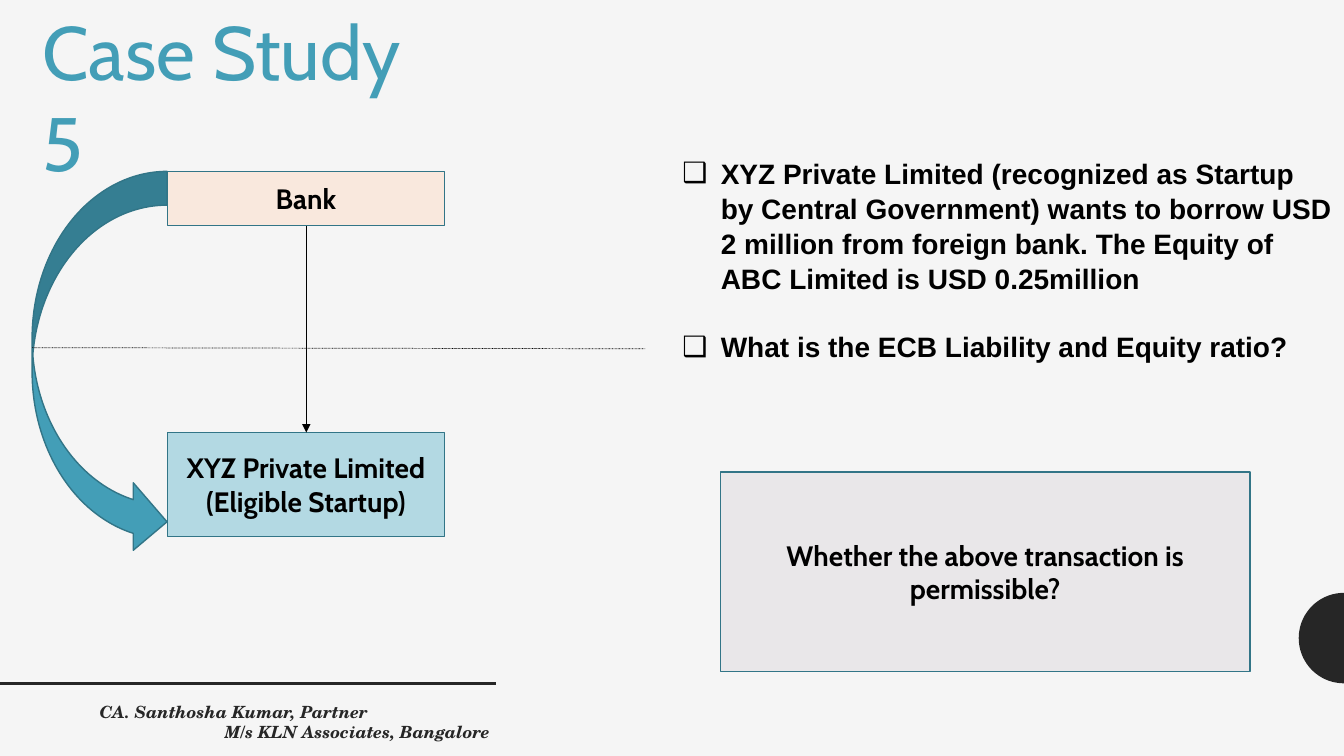
import math
from dataclasses import dataclass

from lxml import etree
from pptx import Presentation
from pptx import util as u
from pptx.dml.color import RGBColor
from pptx.enum import dml, shapes, text
from pptx.oxml.ns import qn


@dataclass(frozen=True)
class Theme:
    background: str = "F5F5F5"
    dark: str = "262626"
    ink: str = "000000"
    accent: str = "439EB7"
    outline: str = "327587"
    bank: str = "F9E8DD"
    startup: str = "B3D9E3"
    question: str = "E9E7E9"
    title_size: int = 54
    body_size: int = 20
    footer_size: int = 12
    heading_font: str = "Cabin"
    body_font: str = "Arial"
    footer_font: str = "TeX Gyre Schola"


THEME = Theme()
SLIDE_W, SLIDE_H = 33.87, 19.05
LEFT, CENTER = text.PP_ALIGN.LEFT, text.PP_ALIGN.CENTER


def rgb(color):
    return RGBColor.from_string(color)


def place(sp, left, top, width, height):
    sp.left, sp.top = u.Cm(left), u.Cm(top)
    sp.width, sp.height = u.Cm(width), u.Cm(height)


def write(p, content, size=THEME.body_size, font=THEME.heading_font,
          color=THEME.ink, bold=True, italic=False, align=LEFT):
    p.alignment = align
    r = p.add_run()
    r.text = content
    r.font.size, r.font.name = u.Pt(size), font
    r.font.bold, r.font.italic = bold, italic
    r.font.color.rgb = rgb(color)


def set_indent(p, left, first=0):
    pPr = p._p.get_or_add_pPr()
    pPr.set("marL", str(u.Cm(left)))
    pPr.set("indent", str(u.Cm(first)))
    return pPr


def set_frame(tf, anchor):
    tf.word_wrap = True
    tf.auto_size = text.MSO_AUTO_SIZE.NONE
    tf.vertical_anchor = anchor


def add_title(s, content, *box):
    title = s.shapes.title
    place(title, *box)
    set_frame(title.text_frame, text.MSO_ANCHOR.TOP)
    write(title.text_frame.paragraphs[0], content, size=THEME.title_size,
          color=THEME.accent, bold=False)


def add_bullets(s, items, *box):
    body = s.placeholders[1]
    place(body, *box)
    tf = body.text_frame
    set_frame(tf, text.MSO_ANCHOR.TOP)
    for i, item in enumerate(items):
        p = tf.add_paragraph() if i else tf.paragraphs[0]
        pPr = set_indent(p, 0.97, -0.97)
        etree.SubElement(pPr, qn("a:buChar")).set("char", "❑")
        p.space_before = u.Pt(24 if i else 0)
        p.line_spacing = 1.04
        write(p, item, font=THEME.body_font)


def add_preset(s, kind, fill, *box, label=""):
    sp = s.shapes.add_shape(kind, *map(u.Cm, box))
    sp.shadow.inherit = False
    sp.fill.solid()
    sp.fill.fore_color.rgb = rgb(fill)
    sp.line.color.rgb = rgb(THEME.outline)
    sp.line.width = u.Pt(1)
    if label:
        set_frame(sp.text_frame, text.MSO_ANCHOR.MIDDLE)
        write(sp.text_frame.paragraphs[0], label, align=CENTER)


def add_line(s, x1, y1, x2, y2, color=THEME.ink, width=0.5, dash=None, arrow=False):
    line = s.shapes.add_connector(shapes.MSO_CONNECTOR.STRAIGHT,
                                  *map(u.Cm, (x1, y1, x2, y2)))
    line.line.color.rgb = rgb(color)
    line.line.width = u.Pt(width)
    if dash:
        line.line.dash_style = dash
    if arrow:
        etree.SubElement(line.line._get_or_add_ln(), qn("a:tailEnd")).set("type", "triangle")
    etree.SubElement(line._element.spPr, qn("a:effectLst"))


def add_half_disc(s, cx, cy, radius, steps=36):
    """Draw the left half of a disc whose flat side lies at cx."""
    angles = [math.pi * (0.5 + i / steps) for i in range(steps + 1)]
    points = [(u.Cm(cx + radius * math.cos(a)), u.Cm(cy - radius * math.sin(a)))
              for a in angles]
    builder = s.shapes.build_freeform(*points[0])
    builder.add_line_segments(points[1:], close=True)
    sp = builder.convert_to_shape()
    sp.shadow.inherit = False
    sp.fill.solid()
    sp.fill.fore_color.rgb = rgb(THEME.dark)
    sp.line.fill.background()


def add_footer(s, lines, *box):
    tf = s.shapes.add_textbox(*map(u.Cm, box)).text_frame
    set_frame(tf, text.MSO_ANCHOR.TOP)
    for i, (content, indent) in enumerate(lines):
        p = tf.add_paragraph() if i else tf.paragraphs[0]
        set_indent(p, indent)
        write(p, content, size=THEME.footer_size, font=THEME.footer_font,
              color=THEME.dark, italic=True)


def main():
    prs = Presentation()
    prs.slide_width, prs.slide_height = u.Cm(SLIDE_W), u.Cm(SLIDE_H)
    s = prs.slides.add_slide(prs.slide_layouts[1])
    s.background.fill.solid()
    s.background.fill.fore_color.rgb = rgb(THEME.background)

    add_half_disc(s, SLIDE_W, 16.08, 1.14)
    add_line(s, 0, 17.22, 12.5, 17.22, color=THEME.dark, width=2)
    add_title(s, "Case Study 5", 0.81, 0, 10.64, 2.57)

    rect = shapes.MSO_SHAPE.RECTANGLE
    add_preset(s, rect, THEME.bank, 4.22, 4.32, 6.98, 1.37, label="Bank")
    add_preset(s, rect, THEME.startup, 4.22, 10.9, 6.98, 2.62,
               label="XYZ Private Limited (Eligible Startup)")
    add_preset(s, shapes.MSO_SHAPE.CURVED_RIGHT_ARROW, THEME.accent,
               0.81, 4.32, 3.4, 9.68)
    add_line(s, 7.72, 5.69, 7.72, 10.9, arrow=True)
    add_line(s, 0.81, 8.76, 16.26, 8.79, dash=dml.MSO_LINE.ROUND_DOT)

    add_bullets(s, [
        "XYZ Private Limited (recognized as Startup by Central Government) wants "
        "to borrow USD 2 million from foreign bank. The Equity of ABC Limited is "
        "USD 0.25million",
        "What is the ECB Liability and Equity ratio?",
    ], 16.94, 3.78, 16.94, 5.38)
    add_preset(s, rect, THEME.question, 18.16, 11.89, 13.34, 5.03,
               label="Whether the above transaction is permissible?")
    add_footer(s, [("CA. Santhosha Kumar, Partner", 0.15),
                   ("M/s KLN Associates, Bangalore", 3.3)],
               2.11, 17.55, 10.59, 1.02)
    prs.save("out.pptx")


if __name__ == "__main__":
    main()
